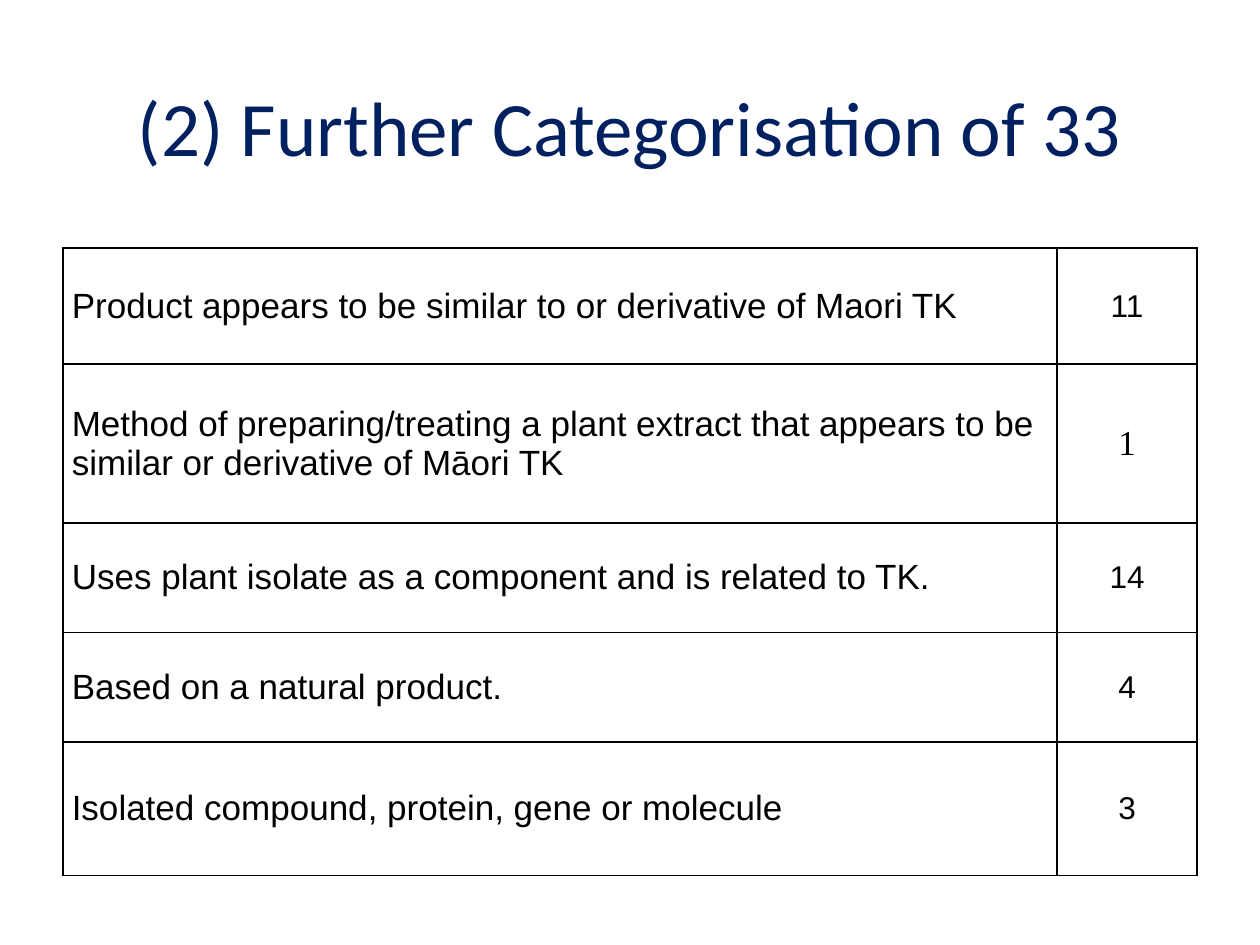
from lxml import etree
from pptx import Presentation
from pptx.dml.color import RGBColor
from pptx.enum.text import MSO_ANCHOR, PP_ALIGN
from pptx.oxml.ns import qn
from pptx.util import Inches, Pt

MIDDLE = MSO_ANCHOR.MIDDLE
LEFT, CENTER = PP_ALIGN.LEFT, PP_ALIGN.CENTER
NAVY = RGBColor(0x00, 0x20, 0x60)
BLACK = RGBColor(0x00, 0x00, 0x00)
WHITE = RGBColor(0xFF, 0xFF, 0xFF)

TITLE_ONLY = 5
COLUMN_WIDTHS = (7.89, 1.11)
CATEGORIES = [
    ("Product appears to be similar to or derivative of Maori TK", "11", 0.92),
    ("Method of preparing/treating a plant extract that appears to be "
     "similar or derivative of Māori TK", "1", 1.26),
    ("Uses plant isolate as a component and is related to TK.", "14", 0.87),
    ("Based on a natural product.", "4", 0.87),
    ("Isolated compound, protein, gene or molecule", "3", 1.06),
]


class SlideBuilder:
    title_font = "Calibri"
    table_font = "Arial"
    label_size = 20
    count_size = 18

    def __init__(self, slide):
        self.slide = slide

    def style_text(self, paragraph, text, font, size, color, alignment):
        paragraph.text = text
        paragraph.alignment = alignment
        paragraph.font.name = font
        paragraph.font.size = Pt(size)
        paragraph.font.color.rgb = color

    def title(self, text, left, top, width, height):
        heading = self.slide.shapes.title
        heading.left, heading.top = Inches(left), Inches(top)
        heading.width, heading.height = Inches(width), Inches(height)
        frame = heading.text_frame
        frame.vertical_anchor = MIDDLE
        frame.margin_left = frame.margin_right = Inches(0.1)
        frame.margin_top = frame.margin_bottom = Inches(0.1)
        self.style_text(frame.paragraphs[0], text, self.title_font, 44, NAVY, CENTER)

    def borders(self, cell):
        properties = cell._tc.get_or_add_tcPr()
        for side in ("lnL", "lnR", "lnT", "lnB"):
            line = etree.SubElement(properties, qn(f"a:{side}"), w=str(Pt(1)))
            fill = etree.SubElement(line, qn("a:solidFill"))
            etree.SubElement(fill, qn("a:srgbClr"), val=str(BLACK))

    def cell(self, cell, text, font, size, alignment):
        self.borders(cell)
        cell.fill.solid()
        cell.fill.fore_color.rgb = WHITE
        cell.vertical_anchor = MIDDLE
        cell.margin_left = cell.margin_right = Inches(0.07)
        cell.margin_top = cell.margin_bottom = 0
        self.style_text(cell.text_frame.paragraphs[0], text, font, size, BLACK, alignment)

    def table(self, categories, left, top):
        heights = [height for _, _, height in categories]
        table = self.slide.shapes.add_table(
            len(categories), len(COLUMN_WIDTHS), Inches(left), Inches(top),
            Inches(sum(COLUMN_WIDTHS)), Inches(sum(heights))).table
        table.first_row = table.horz_banding = False
        for column, width in zip(table.columns, COLUMN_WIDTHS):
            column.width = Inches(width)
        for row, (label, count, height) in zip(table.rows, categories):
            row.height = Inches(height)
            label_cell, count_cell = row.cells
            self.cell(label_cell, label, self.table_font, self.label_size, LEFT)
            self.cell(count_cell, count, self.table_font, self.count_size, CENTER)
        return table


def main():
    presentation = Presentation()
    presentation.slide_width = Inches(10)
    presentation.slide_height = Inches(7.5)
    layout = presentation.slide_layouts[TITLE_ONLY]
    builder = SlideBuilder(presentation.slides.add_slide(layout))
    builder.title("(2) Further Categorisation of 33", 0.5, 0.36, 9, 1.27)
    table = builder.table(CATEGORIES, 0.5, 1.97)
    method_count = table.cell(1, 1).text_frame.paragraphs[0]
    method_count.font.name = "Times New Roman"
    method_count.font.size = Pt(20)
    presentation.save("out.pptx")


if __name__ == "__main__":
    main()
